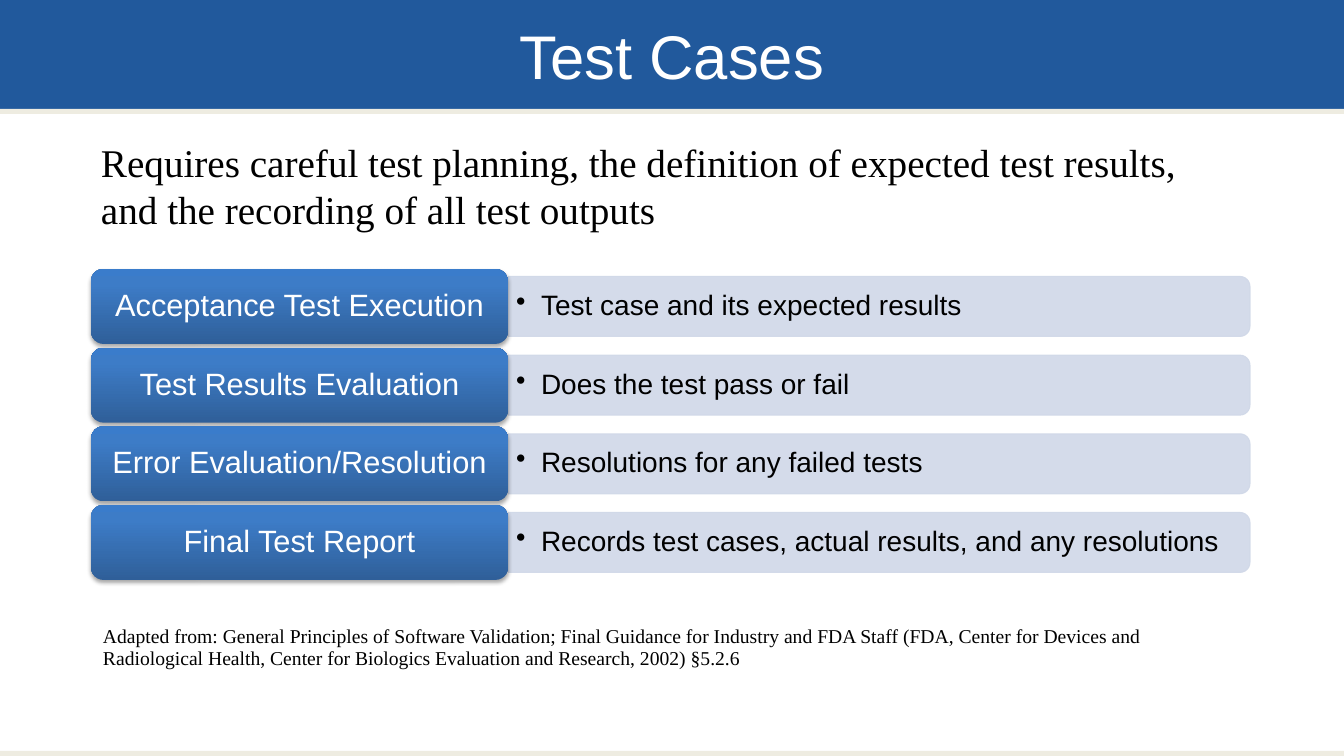
from lxml.etree import SubElement
from pptx import Presentation
from pptx.dml.color import RGBColor
from pptx.enum.shapes import MSO_SHAPE as Shape
from pptx.enum.text import MSO_ANCHOR as Anchor, PP_ALIGN as Align
from pptx.oxml import parse_xml
from pptx.oxml.ns import nsdecls, qn
from pptx.util import Pt

EMU_PER_PX = 914400 / 100.8
WIDTH, HEIGHT = 1344, 756
HEADER_HEIGHT, STRIPE_HEIGHT = 109, 5
WHITE, BLACK, BLUE, CREAM, PALE_BLUE = "FFFFFF", "000000", "21599C", "EEECE1", "D0D8E8"
LABEL_STOPS = [(0, "2F5F99"), (80, "3D7CC7"), (100, "3A7CCB")]
SANS, SERIF = "Arial", "Times New Roman"
TEST_STEPS = [
    ("Acceptance Test Execution", "Test case and its expected results"),
    ("Test Results Evaluation", "Does the test pass or fail"),
    ("Error Evaluation/Resolution", "Resolutions for any failed tests"),
    ("Final Test Report", "Records test cases, actual results, and any resolutions"),
]
INTRO = ("Requires careful test planning, the definition of expected test results, "
         "and the recording of all test outputs")
SOURCE_NOTE = ("Adapted from: General Principles of Software Validation; Final Guidance for "
               "Industry and FDA Staff (FDA, Center for Devices and Radiological Health, "
               "Center for Biologics Evaluation and Research, 2002) §5.2.6")


def px(length):
    """Turn pixels into EMU."""
    return round(length * EMU_PER_PX)


def rgb(color):
    """Turn a hex string into a colour."""
    return RGBColor.from_string(color)


def write(shape, text, size=20, font=SANS, color=BLACK, align=Align.LEFT,
          anchor=Anchor.TOP, insets=(10, 5), spacing=None, bullet_indent=0):
    """Put one formatted paragraph into a shape."""
    frame = shape.text_frame
    frame.word_wrap = True
    frame.vertical_anchor = anchor
    frame.margin_left = frame.margin_right = px(insets[0])
    frame.margin_top = frame.margin_bottom = px(insets[1])
    paragraph = frame.paragraphs[0]
    paragraph.text = text
    paragraph.alignment = align
    paragraph.line_spacing = spacing
    if bullet_indent:
        properties = paragraph._p.get_or_add_pPr()
        properties.set("marL", str(px(bullet_indent)))
        properties.set("indent", str(-px(bullet_indent)))
        SubElement(properties, qn("a:buChar")).set("char", "•")
    paragraph.font.size = Pt(size)
    paragraph.font.name = font
    paragraph.font.color.rgb = rgb(color)


def add_text(slide, box, text, **text_format):
    """Add a text box."""
    write(slide.shapes.add_textbox(*map(px, box)), text, **text_format)


def add_block(slide, preset, box, color):
    """Add a plain filled shape."""
    shape = slide.shapes.add_shape(preset, *map(px, box))
    shape.shadow.inherit = False
    shape.fill.solid()
    shape.fill.fore_color.rgb = rgb(color)
    shape.line.fill.background()
    return shape


def add_header(slide, box):
    """Place the title band and the stripe below it."""
    left, top, width, height = box
    title = slide.shapes.title
    title.left, title.top, title.width, title.height = map(px, box)
    title.fill.solid()
    title.fill.fore_color.rgb = rgb(BLUE)
    write(title, "Test Cases", size=44, color=WHITE, align=Align.CENTER, anchor=Anchor.MIDDLE)
    add_block(slide, Shape.RECTANGLE, (left, top + height, width, STRIPE_HEIGHT), CREAM)


def add_bar(slide, box, text):
    """Place a pale bar rounded on its right side, with a bullet on it."""
    left, top, width, height = box
    turned = (left + (width - height) / 2, top + (height - width) / 2, height, width)
    bar = add_block(slide, Shape.ROUND_2_SAME_RECTANGLE, turned, PALE_BLUE)
    bar.rotation = 90
    bar.line.color.rgb = rgb(PALE_BLUE)
    bar.line.width = Pt(0.75)
    for color in bar._element.spPr.iter(qn("a:srgbClr")):
        SubElement(color, qn("a:alpha")).set("val", "90000")
    add_text(slide, box, text, anchor=Anchor.MIDDLE, insets=(8, 4), spacing=0.9,
             bullet_indent=25)


def add_label(slide, box, text):
    """Place a blue gradient label with a soft shadow."""
    label = add_block(slide, Shape.ROUNDED_RECTANGLE, box, BLUE)
    properties = label._element.spPr
    stops = "".join(f'<a:gs pos="{position * 1000}"><a:srgbClr val="{color}"/></a:gs>'
                    for position, color in LABEL_STOPS)
    gradient = parse_xml(f'<a:gradFill {nsdecls("a")} rotWithShape="1"><a:gsLst>{stops}'
                         '</a:gsLst><a:lin ang="16200000" scaled="0"/></a:gradFill>')
    properties.replace(properties.find(qn("a:solidFill")), gradient)
    properties.find(qn("a:effectLst")).append(parse_xml(
        f'<a:outerShdw {nsdecls("a")} blurRad="{Pt(3.1)}" dist="{Pt(1.8)}" dir="5400000" '
        f'rotWithShape="0"><a:srgbClr val="{BLACK}"><a:alpha val="35000"/></a:srgbClr>'
        '</a:outerShdw>'))
    write(label, text, size=22, color=WHITE, align=Align.CENTER, anchor=Anchor.MIDDLE,
          insets=(13, 9), spacing=0.9)


def add_test_steps(slide, box):
    """Place the rows of labels and bars at an equal pitch."""
    left, top, width, height = box
    label_width, label_height, bar_height = 417, 75, 60
    pitch = (height - label_height) / (len(TEST_STEPS) - 1)
    for row, (name, detail) in enumerate(TEST_STEPS):
        row_top = top + row * pitch
        bar_top = row_top + (label_height - bar_height) / 2
        add_bar(slide, (left + label_width, bar_top, width - label_width, bar_height), detail)
        add_label(slide, (left, row_top, label_width, label_height), name)


def main():
    """Build and save the slide."""
    presentation = Presentation()
    presentation.slide_width, presentation.slide_height = px(WIDTH), px(HEIGHT)
    slide = presentation.slides.add_slide(presentation.slide_layouts[5])
    add_header(slide, (0, 0, WIDTH, HEADER_HEIGHT))
    add_block(slide, Shape.RECTANGLE, (0, HEIGHT - STRIPE_HEIGHT, WIDTH, STRIPE_HEIGHT), CREAM)
    add_test_steps(slide, (91, 269, 1159, 311))
    add_text(slide, (91, 133, 1159, 136), INTRO, size=28, font=SERIF)
    add_text(slide, (93, 622, 1159, 53), SOURCE_NOTE, size=14, font=SERIF, spacing=0.9)
    presentation.save("out.pptx")


if __name__ == "__main__":
    main()
